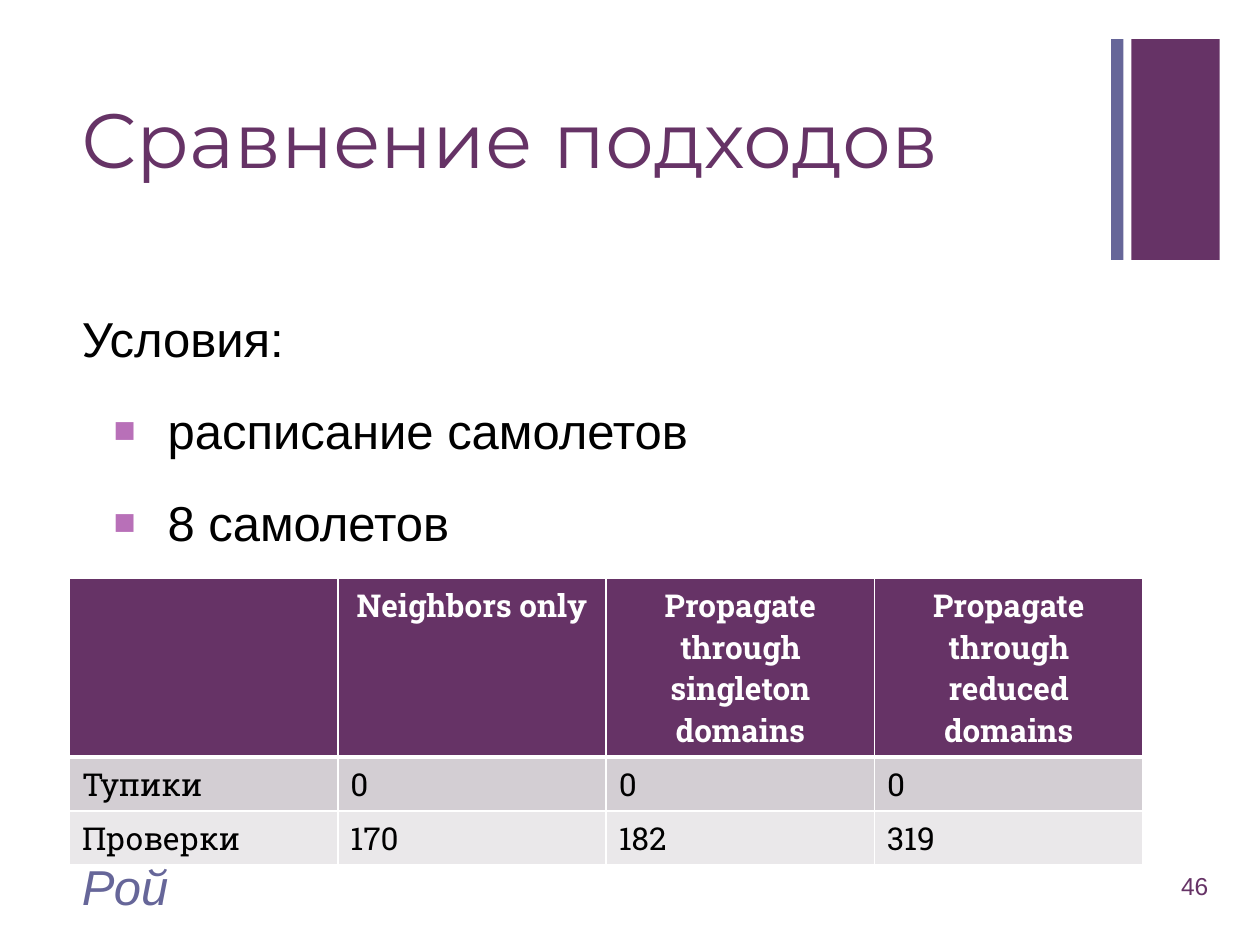
import pptx
import pptx.util
import pptx.dml.color
import pptx.enum.shapes
import pptx.enum.text
import lxml.etree
from pptx.util import Cm, Pt

PLUM, BLUE, WHITE, BLACK = "663366", "666699", "FFFFFF", "000000"
ALIGN = pptx.enum.text.PP_ALIGN
HEAD, MAIN, SLAB = "Montserrat", "Arial", "Roboto Slab"


def tint(code):
    return pptx.dml.color.RGBColor.from_string(code)


def add_run(para, text, size, face, color, bold=False, slant=False):
    run = para.add_run()
    run.text = text
    font = run.font
    font.size, font.name = Pt(size), face
    font.bold, font.italic = bold, slant
    font.color.rgb = tint(color)


deck = pptx.Presentation()
deck.slide_width, deck.slide_height = Cm(25.4), Cm(19.05)
slide = deck.slides.add_slide(deck.slide_layouts[6])

# Corner bars
for left, width, color in ((22.81, 1.78, PLUM), (22.4, 0.25, BLUE)):
    bar = slide.shapes.add_shape(
        pptx.enum.shapes.MSO_SHAPE.RECTANGLE,
        Cm(left), Cm(0.79), Cm(width), Cm(4.45))
    bar.shadow.inherit = False
    bar.fill.solid()
    bar.fill.fore_color.rgb = tint(color)
    bar.line.fill.background()

# Title, slide number and footer
for text, place, size, face, color, side, slant in (
        ("Сравнение подходов", (1.4, 1.35, 20.98, 3.1),
         44, HEAD, PLUM, ALIGN.LEFT, False),
        ("46", (23.06, 17.35, 1.55, 1.02),
         14, MAIN, PLUM, ALIGN.RIGHT, False),
        ("Рой", (1.4, 17.35, 17.02, 1.02),
         28, MAIN, BLUE, ALIGN.LEFT, True)):
    frame = slide.shapes.add_textbox(*map(Cm, place)).text_frame
    frame.word_wrap = True
    frame.vertical_anchor = pptx.enum.text.MSO_ANCHOR.MIDDLE
    para = frame.paragraphs[0]
    para.alignment = side
    if face == HEAD:
        para.line_spacing = 0.9
    add_run(para, text, size, face, color, slant=slant)

# Conditions with square bullets
frame = slide.shapes.add_textbox(
    Cm(1.4), Cm(5.51), Cm(20.98), Cm(11.51)).text_frame
frame.word_wrap = True
lines = ("Условия:", "расписание самолетов", "8 самолетов")
for row, text in enumerate(lines):
    para = frame.add_paragraph() if row else frame.paragraphs[0]
    para.line_spacing = 1.5
    para.space_before = Pt(2)
    add_run(para, text, 28, MAIN, BLACK)
    if row:
        para.level = 1
        props = para._p.get_or_add_pPr()
        props.set("marL", str(Cm(1.73)))
        props.set("indent", str(-Cm(1.09)))
        paint = lxml.etree.SubElement(props, pptx.oxml.ns.qn("a:buClr"))
        lxml.etree.SubElement(
            paint, pptx.oxml.ns.qn("a:srgbClr"), val="B870B8")
        lxml.etree.SubElement(
            props, pptx.oxml.ns.qn("a:buSzPct"), val="75000")
        lxml.etree.SubElement(
            props, pptx.oxml.ns.qn("a:buFont"), typeface=MAIN)
        lxml.etree.SubElement(props, pptx.oxml.ns.qn("a:buChar"), char="■")

# Table of results
data = (
    ("", "Neighbors only", "Propagate through singleton domains",
     "Propagate through reduced domains"),
    ("Тупики", "0", "0", "0"),
    ("Проверки", "170", "182", "319"),
)
fills = (PLUM, "D3CED3", "EAE8EA")
highs = (3.6, 1.09, 1.09)
table = slide.shapes.add_table(
    3, 4, Cm(1.4), Cm(11.66), Cm(21.66), Cm(sum(highs))).table
for row, texts in enumerate(data):
    table.rows[row].height = Cm(highs[row])
    for col, text in enumerate(texts):
        cell = table.cell(row, col)
        para = cell.text_frame.paragraphs[0]
        if text:
            para.alignment = ALIGN.LEFT if row else ALIGN.CENTER
            add_run(para, text, 18, SLAB, BLACK if row else WHITE,
                    bold=row == 0)
        # Borders come before the fill; the rule below the head is thick
        props = cell._tc.get_or_add_tcPr()
        for edge in ("lnL", "lnR", "lnT", "lnB"):
            thick = (row, edge) in ((0, "lnB"), (1, "lnT"))
            line = lxml.etree.SubElement(
                props, pptx.oxml.ns.qn("a:" + edge),
                w=str(Pt(3 if thick else 1)))
            paint = lxml.etree.SubElement(
                line, pptx.oxml.ns.qn("a:solidFill"))
            lxml.etree.SubElement(
                paint, pptx.oxml.ns.qn("a:srgbClr"), val=WHITE)
        cell.fill.solid()
        cell.fill.fore_color.rgb = tint(fills[row])
for col in table.columns:
    col.width = Cm(5.41)

deck.save("out.pptx")
